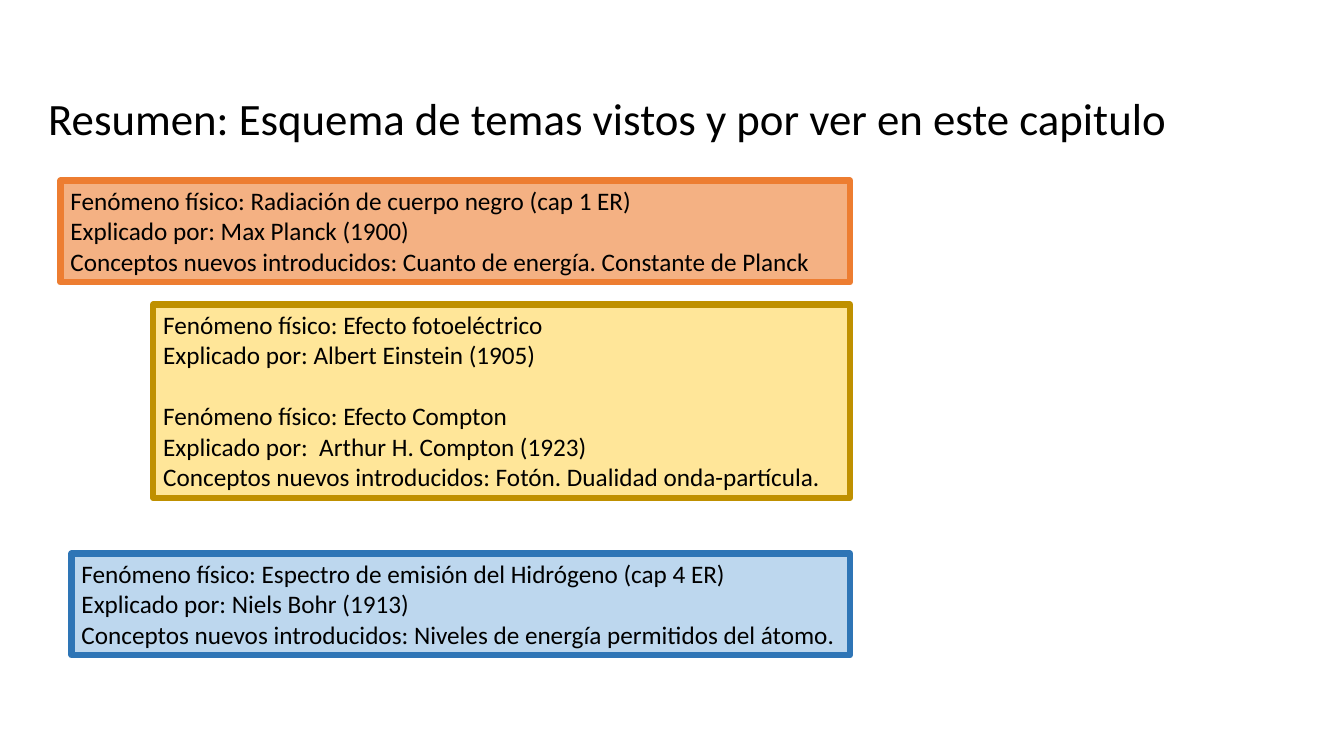
from pptx import Presentation
from pptx.dml.color import RGBColor
from pptx.enum.shapes import MSO_SHAPE as Shape
from pptx.enum.text import MSO_ANCHOR as Anchor, PP_ALIGN as Align
from pptx.util import Inches, Pt

BLACK = RGBColor(0x00, 0x00, 0x00)
PEACH = RGBColor(0xF4, 0xB1, 0x83)
ORANGE = RGBColor(0xED, 0x7D, 0x31)
CREAM = RGBColor(0xFF, 0xE6, 0x99)
GOLD = RGBColor(0xBF, 0x90, 0x00)
SKY = RGBColor(0xBD, 0xD7, 0xEE)
BLUE = RGBColor(0x2E, 0x75, 0xB6)

RIGHT = 8.43  # shared right edge of the topic boxes

# left, top, height, fill, border, groups of lines
TOPICS = [
    (0.6, 1.79, 1.01, PEACH, ORANGE, [
        ["Fenómeno físico: Radiación de cuerpo negro (cap 1 ER)",
         "Explicado por: Max Planck (1900)",
         "Conceptos nuevos introducidos: Cuanto de energía. Constante de Planck"],
    ]),
    (1.52, 3.02, 1.92, CREAM, GOLD, [
        ["Fenómeno físico: Efecto fotoeléctrico",
         "Explicado por: Albert Einstein (1905)"],
        ["Fenómeno físico: Efecto Compton",
         "Explicado por:  Arthur H. Compton (1923)",
         "Conceptos nuevos introducidos: Fotón. Dualidad onda-partícula."],
    ]),
    (0.71, 5.49, 1.01, SKY, BLUE, [
        ["Fenómeno físico: Espectro de emisión del Hidrógeno (cap 4 ER)",
         "Explicado por: Niels Bohr (1913)",
         "Conceptos nuevos introducidos: Niveles de energía permitidos del átomo."],
    ]),
]


class Deck:
    face = "Calibri"
    head = Pt(32)
    body = Pt(18)
    gap = Pt(22)
    edge = Pt(4.5)

    def __init__(self):
        self.show = Presentation()
        self.show.slide_width = Inches(13.33)
        self.show.slide_height = Inches(7.5)
        self.slide = self.show.slides.add_slide(self.show.slide_layouts[6])

    def style(self, para, size):
        para.alignment = Align.LEFT
        para.font.name = self.face
        para.font.size = size
        para.font.color.rgb = BLACK

    def title(self, text, left, top, width, height):
        box = self.slide.shapes.add_textbox(
            Inches(left), Inches(top), Inches(width), Inches(height))
        frame = box.text_frame
        frame.word_wrap = True
        frame.vertical_anchor = Anchor.MIDDLE
        para = frame.paragraphs[0]
        para.text = text
        para.line_spacing = 0.9
        self.style(para, self.head)

    def topic(self, left, top, height, fill, border, groups):
        """Draw a framed box; a gap parts each group of lines."""
        box = self.slide.shapes.add_shape(
            Shape.RECTANGLE, Inches(left), Inches(top),
            Inches(RIGHT - left), Inches(height))
        box.shadow.inherit = False
        box.fill.solid()
        box.fill.fore_color.rgb = fill
        box.line.color.rgb = border
        box.line.width = self.edge
        frame = box.text_frame
        frame.word_wrap = True
        frame.vertical_anchor = Anchor.TOP
        para = frame.paragraphs[0]
        for g, group in enumerate(groups):
            for n, line in enumerate(group):
                if g or n:
                    para = frame.add_paragraph()
                para.text = line
                self.style(para, self.body)
                if g and not n:
                    para.space_before = self.gap

    def save(self):
        self.show.save("out.pptx")


def main():
    deck = Deck()
    deck.title("Resumen: Esquema de temas vistos y por ver en este capitulo",
               0.38, 0.47, 11.5, 1.45)
    for topic in TOPICS:
        deck.topic(*topic)
    deck.save()


if __name__ == "__main__":
    main()
